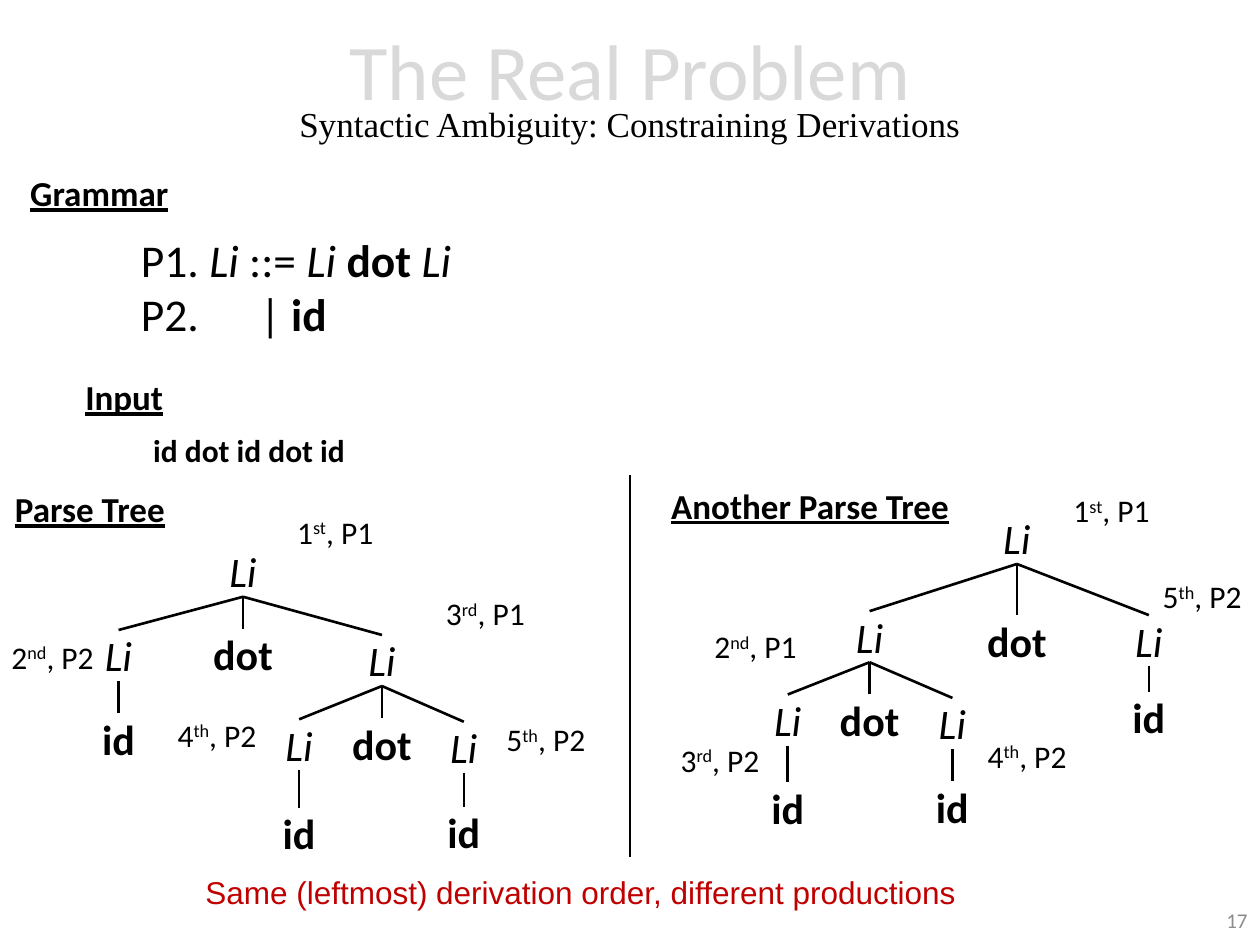
from dataclasses import dataclass

from lxml import etree
from pptx import Presentation
from pptx import util as u
from pptx.dml.color import RGBColor
from pptx.enum import shapes, text
from pptx.oxml.ns import qn


@dataclass(frozen=True)
class Theme:
    """Colours, fonts and type sizes of the slide."""
    ink: str = "000000"
    title: str = "D9D9D9"
    accent: str = "C00000"
    muted: str = "8C8C8C"
    body: str = "Calibri"
    serif: str = "Times New Roman"
    sans: str = "Arial"
    title_size: float = 45
    grammar_size: float = 26
    node_size: float = 24
    heading_size: float = 20
    note_size: float = 18
    number_size: float = 12
    line_width: float = 1.5


@dataclass(frozen=True)
class Node:
    """A tree symbol, its centre and top in the tree box, its step and its children."""
    label: str
    x: float
    y: float
    step: tuple = ()
    step_offset: tuple = (0, 0)
    children: tuple = ()


THEME = Theme()
NODE_HEIGHT = 1.03
NODE_WIDTHS = {"Li": 1.07, "id": 1.17, "dot": 1.73}
STEP_WIDTH = 2.16

RIGHT_NESTED = Node("Li", 4.9, 1.42, ("1", "st", ", P1"), (0.84, -0.79), (
    Node("Li", 2.39, 3.12, ("2", "nd", ", P2"), (-2.41, 0.03), (Node("id", 2.39, 4.8),)),
    Node("dot", 4.9, 3.1),
    Node("Li", 7.7, 3.22, ("3", "rd", ", P1"), (1.04, -0.94), (
        Node("Li", 6.03, 4.92, ("4", "th", ", P2"), (-2.7, -0.2), (Node("id", 6.03, 6.7),)),
        Node("dot", 7.7, 4.9),
        Node("Li", 9.35, 4.97, ("5", "th", ", P2"), (0.61, -0.15), (Node("id", 9.35, 6.68),)),
    )),
))

LEFT_NESTED = Node("Li", 7.8, 0.76, ("1", "st", ", P1"), (0.89, -0.56), (
    Node("Li", 4.83, 2.74, ("2", "nd", ", P1"), (-3.38, 0.2), (
        Node("Li", 3.18, 4.42, ("3", "rd", ", P2"), (-2.41, 0.81), (Node("id", 3.18, 6.19),)),
        Node("dot", 4.83, 4.42),
        Node("Li", 6.5, 4.49, ("4", "th", ", P2"), (0.46, 0.66), (Node("id", 6.5, 6.17),)),
    )),
    Node("dot", 7.8, 2.82),
    Node("Li", 10.46, 2.82, ("5", "th", ", P2"), (0.03, -0.89), (Node("id", 10.46, 4.36),)),
))


def style_run(run, size, font=THEME.body, color=THEME.ink, bold=False, italic=False):
    """Format one run."""
    run.font.size = u.Pt(size)
    run.font.name = font
    run.font.color.rgb = RGBColor.from_string(color)
    run.font.bold = bold
    run.font.italic = italic


def add_text(slide, box, content, size, wrap=False, align=text.PP_ALIGN.LEFT, **style):
    """Add a text box with one uniformly formatted paragraph."""
    shape = slide.shapes.add_textbox(*(u.Cm(length) for length in box))
    shape.text_frame.text = content
    shape.text_frame.word_wrap = wrap
    paragraph = shape.text_frame.paragraphs[0]
    paragraph.alignment = align
    for run in paragraph.runs:
        style_run(run, size, **style)
    return shape


def add_line(slide, start, end):
    """Add a straight black line between two points."""
    line = slide.shapes.add_connector(
        shapes.MSO_CONNECTOR.STRAIGHT, *(u.Cm(length) for length in (*start, *end)))
    line.line.color.rgb = RGBColor.from_string(THEME.ink)
    line.line.width = u.Pt(THEME.line_width)
    etree.SubElement(line._element.spPr, qn("a:effectLst"))


def add_heading(slide, box, content):
    """Add an underlined section heading."""
    shape = add_text(slide, box, content, THEME.heading_size, wrap=True, bold=True)
    paragraph = shape.text_frame.paragraphs[0]
    paragraph.line_spacing = 0.9
    paragraph.space_before = u.Pt(10)
    paragraph.runs[0].font.underline = True


def add_title(slide, box):
    """Add the title with its subtitle on the second line."""
    shape = add_text(slide, box, "The Real Problem\vSyntactic Ambiguity: Constraining Derivations",
                     THEME.title_size, wrap=True, align=text.PP_ALIGN.CENTER, color=THEME.title)
    shape.text_frame.vertical_anchor = text.MSO_ANCHOR.MIDDLE
    paragraph = shape.text_frame.paragraphs[0]
    paragraph.line_spacing = 0.7
    style_run(paragraph.runs[1], THEME.heading_size, THEME.serif)


def add_grammar(slide, box):
    """Add the grammar heading and its two productions."""
    left, top, width, height = box
    add_heading(slide, (left, top, 3.68, 2.49), "Grammar")
    shape = slide.shapes.add_textbox(
        u.Cm(left + 2.23), u.Cm(top + 1.12), u.Cm(width - 2.23), u.Cm(height - 1.12))
    frame = shape.text_frame
    frame.word_wrap = True
    productions = (
        (("P1.", ""), (" Li", "i"), (" ::= ", ""), ("Li ", "i"), ("dot ", "b"), ("Li", "i")),
        (("P2.\t| ", ""), ("id", "b")),
    )
    for index, parts in enumerate(productions):
        paragraph = frame.add_paragraph() if index else frame.paragraphs[0]
        for content, look in parts:
            run = paragraph.add_run()
            run.text = content
            style_run(run, THEME.grammar_size, bold=look == "b", italic=look == "i")
    tab_list = etree.SubElement(paragraph._p.get_or_add_pPr(), qn("a:tabLst"))
    etree.SubElement(tab_list, qn("a:tab"), pos=str(u.Cm(2.4)), algn="l")


def add_input(slide, box):
    """Add the input heading and the token string below it."""
    left, top, width, height = box
    add_heading(slide, (left, top, 4.29, 1.04), "Input")
    add_text(slide, (left + 1.37, top + 1.02, width - 1.37, height - 1.02),
             "id dot id dot id", THEME.note_size, bold=True)


def add_step(slide, left, top, step):
    """Add a derivation step whose ordinal ending is raised."""
    shape = add_text(slide, (left, top, STEP_WIDTH, NODE_HEIGHT), step[0], THEME.note_size)
    paragraph = shape.text_frame.paragraphs[0]
    for content in step[1:]:
        run = paragraph.add_run()
        run.text = content
        style_run(run, THEME.note_size)
    paragraph.runs[1].font._element.set("baseline", "30000")


def add_node(slide, left, top, node):
    """Draw a node, its step and, recursively, its branches."""
    x, y = left + node.x, top + node.y
    width = NODE_WIDTHS[node.label]
    nonterminal = node.label == "Li"
    shape = add_text(slide, (x - width / 2, y, width, NODE_HEIGHT), node.label, THEME.node_size,
                     align=text.PP_ALIGN.CENTER, bold=not nonterminal, italic=nonterminal)
    shape.text_frame.margin_top = shape.text_frame.margin_bottom = 0
    if node.step:
        add_step(slide, x + node.step_offset[0], y + node.step_offset[1], node.step)
    for child in node.children:
        add_line(slide, (x, y + NODE_HEIGHT), (left + child.x, top + child.y))
        add_node(slide, left, top, child)


def add_tree(slide, box, heading, heading_offset, root):
    """Add a headed parse tree inside its box."""
    left, top, width, height = box
    heading_left, heading_top = heading_offset
    add_heading(slide, (left + heading_left, top + heading_top, width * 0.53, 1.55), heading)
    add_node(slide, left, top, root)


def add_footer(slide, box):
    """Add the conclusion and the slide number."""
    left, top, width, height = box
    add_text(slide, (left + 3.89, top, 17.63, NODE_HEIGHT),
             "Same (leftmost) derivation order, different productions",
             THEME.note_size, font=THEME.sans, color=THEME.accent)
    number = add_text(slide, (left + width - 5.72, top + height - 1.01, 5.72, 1.01), "17",
                      THEME.number_size, wrap=True, align=text.PP_ALIGN.RIGHT, color=THEME.muted)
    number.text_frame.vertical_anchor = text.MSO_ANCHOR.MIDDLE


def main():
    """Build the slide and save it."""
    presentation = Presentation()
    presentation.slide_width, presentation.slide_height = u.Cm(25.4), u.Cm(19.05)
    slide = presentation.slides.add_slide(presentation.slide_layouts[6])
    add_title(slide, (1.75, 0.08, 21.9, 3.68))
    add_grammar(slide, (0.36, 3.43, 10.05, 3.61))
    add_input(slide, (1.47, 7.54, 5.94, 2.04))
    add_tree(slide, (0, 9.58, 12.7, 7.7), "Parse Tree", (0.05, 0.22), RIGHT_NESTED)
    add_tree(slide, (12.7, 9.58, 12.7, 7.7), "Another Parse Tree", (0.58, 0.15), LEFT_NESTED)
    add_line(slide, (12.7, 9.58), (12.7, 17.28))
    add_footer(slide, (0, 17.48, 25.4, 1.57))
    presentation.save("out.pptx")


if __name__ == "__main__":
    main()
